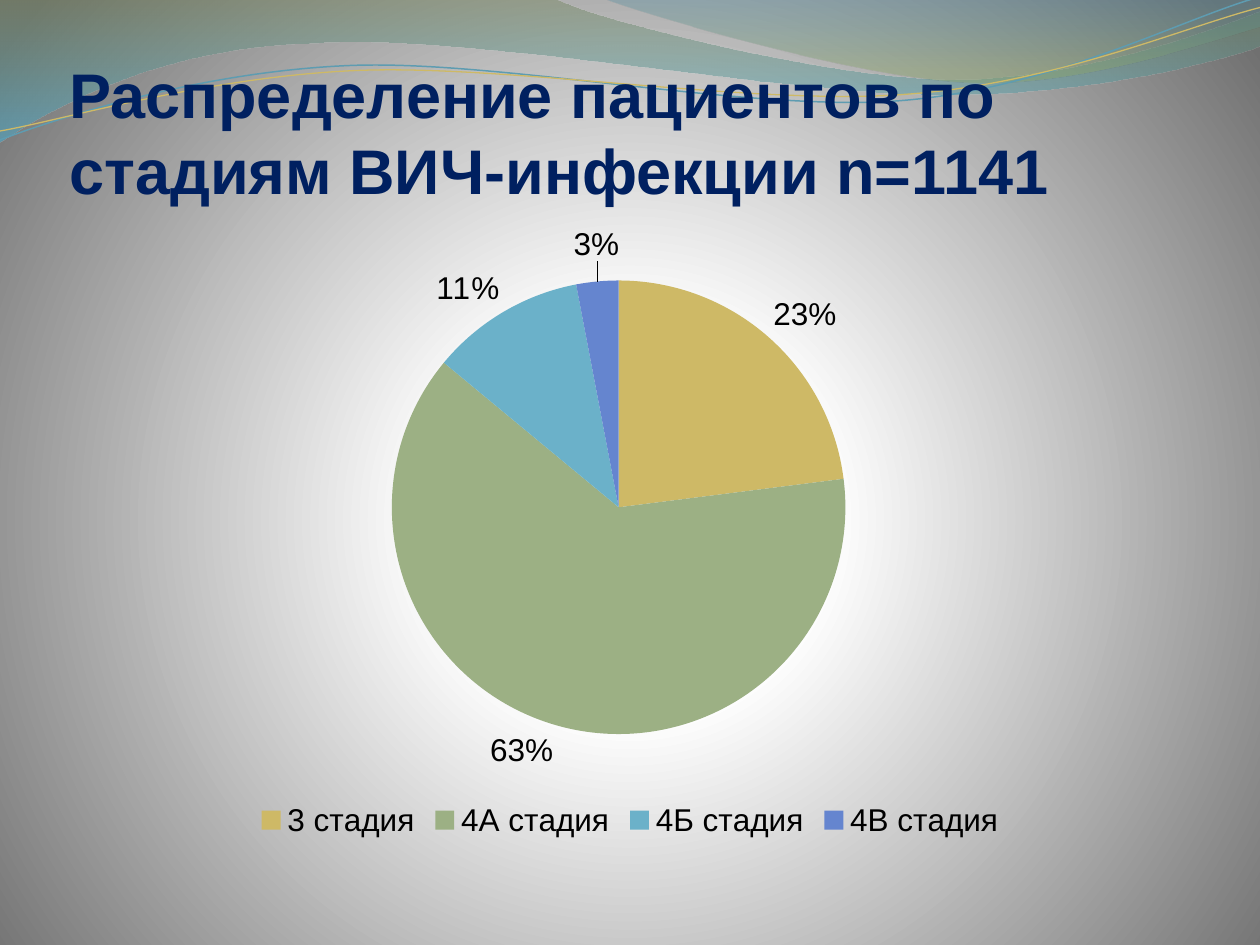
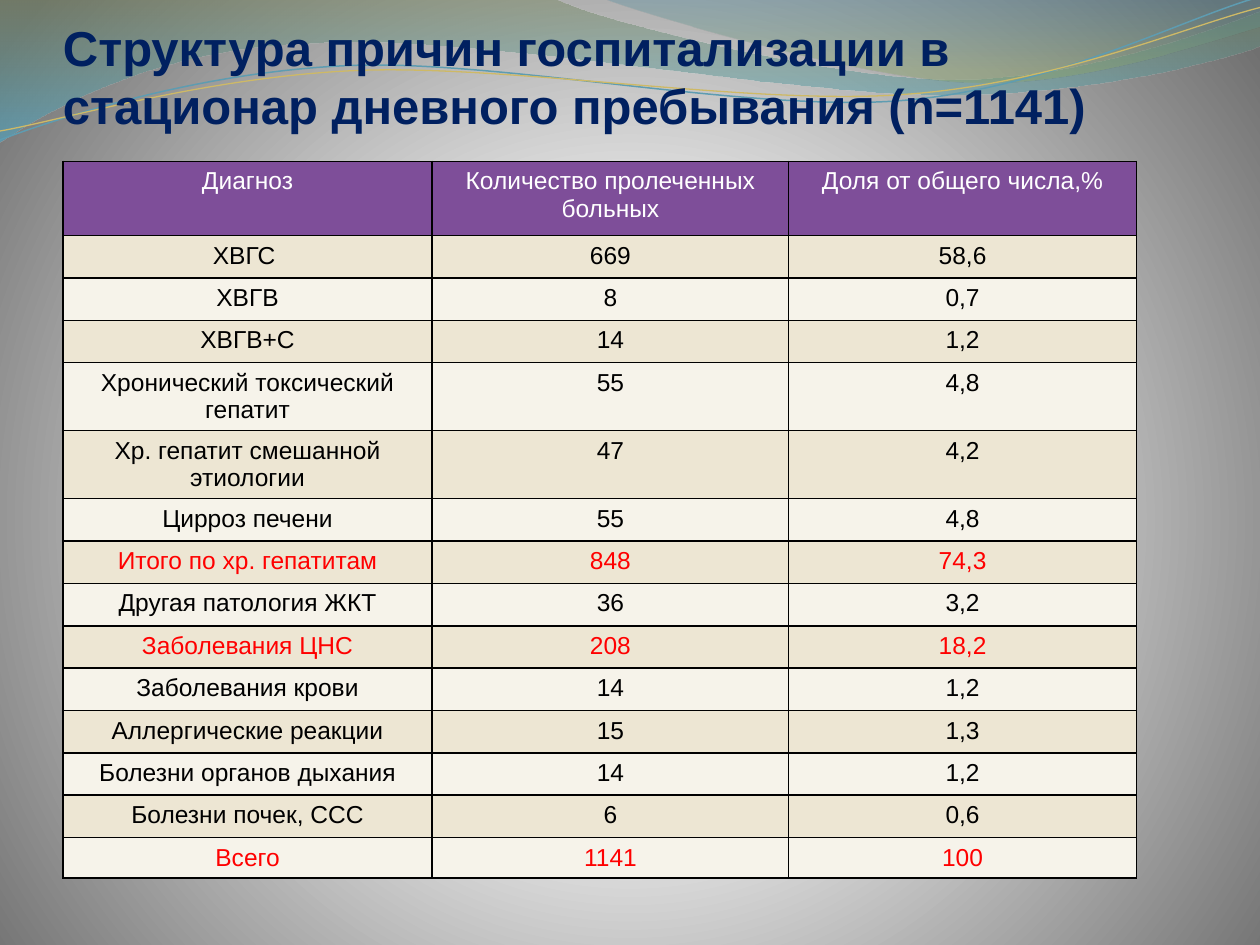
"""Build two slides on HIV patients: stages as a pie, hospitalisation causes as a table."""
from math import cos, radians, sin

from pptx import Presentation
from pptx.chart.data import CategoryChartData
from pptx.dml.color import RGBColor
from pptx.enum.chart import XL_CHART_TYPE, XL_LABEL_POSITION, XL_LEGEND_POSITION
from pptx.enum.text import MSO_ANCHOR, PP_ALIGN
from pptx.oxml import parse_xml
from pptx.oxml.ns import nsdecls, qn
from pptx.util import Inches, Pt

FONT = "Arial"
NAVY = RGBColor(0x00, 0x20, 0x60)
BLACK = RGBColor(0x00, 0x00, 0x00)
WHITE = RGBColor(0xFF, 0xFF, 0xFF)
GREY = RGBColor(0x70, 0x70, 0x70)
RED = RGBColor(0xFF, 0x00, 0x00)
PURPLE = RGBColor(0x7E, 0x4E, 0x99)
SAND = RGBColor(0xED, 0xE6, 0xD3)
CREAM = RGBColor(0xF6, 0xF3, 0xEA)
GOLD = RGBColor(0xCE, 0xB9, 0x66)
SAGE = RGBColor(0x9C, 0xB0, 0x84)
SKY = RGBColor(0x6B, 0xB1, 0xC9)
BLUE = RGBColor(0x65, 0x85, 0xCF)
OLIVE = RGBColor(0x74, 0x85, 0x5E)
CYAN = RGBColor(0x4A, 0xAC, 0xCE)
TEAL = RGBColor(0x45, 0x88, 0x9F)
MOSS = RGBColor(0x8A, 0xA3, 0x6D)
STEEL = RGBColor(0x5E, 0x9C, 0xB1)

WIDTH, HEIGHT = 10, 7.5

STAGES_TITLE = "Распределение пациентов по стадиям ВИЧ-инфекции n=1141"
STAGES = [
    ("3 стадия", 23, GOLD),
    ("4А стадия", 63, SAGE),
    ("4Б стадия", 11, SKY),
    ("4В стадия", 3, BLUE),
]

CAUSES_TITLE = "Структура причин госпитализации в стационар дневного пребывания (n=1141)"
CAUSES_HEADER = ("Диагноз", "Количество пролеченных больных", "Доля от общего числа,%")
CAUSES = [
    ("ХВГС ", "669", "58,6"),
    ("ХВГВ", "8", "0,7"),
    ("ХВГВ+С", "14", "1,2"),
    ("Хронический токсический гепатит", "55", "4,8"),
    ("Хр. гепатит смешанной этиологии", "47", "4,2"),
    ("Цирроз печени", "55", "4,8"),
    ("Итого по хр. гепатитам", "848", "74,3"),
    ("Другая патология ЖКТ", "36", "3,2"),
    ("Заболевания ЦНС", "208", "18,2"),
    ("Заболевания крови", "14", "1,2"),
    ("Аллергические реакции", "15", "1,3"),
    ("Болезни органов дыхания", "14", "1,2"),
    ("Болезни почек, ССС", "6", "0,6"),
    ("Всего", "1141", "100"),
]
HIGHLIGHTED = {"Итого по хр. гепатитам", "Заболевания ЦНС", "Всего"}
COLUMN_WIDTHS = (2.93, 2.83, 2.76)
HEADER_HEIGHT, ROW_HEIGHT, WRAPPED_HEIGHT, LAST_HEIGHT = 0.59, 3.7 / 11, 0.54, 0.32
WRAP_LENGTH = 25

BACKDROP = [(0, WHITE, 100), (25, WHITE, 100), (100, GREY, 100)]
BACKDROP_SHAPE = ('<a:path path="circle"><a:fillToRect l="10000" t="110000" '
                  'r="10000" b="100000"/></a:path>')
DOWNWARD = '<a:lin ang="5400000" scaled="0"/>'

WAVES = [
    ([(0, 0), (4.4, -0.01), (4.76, 0.17, 6.64, 0.63, 7.58, 0.63),
      (8.53, 0.63, 9.58, 0.26, 10, 0.09), (10.01, 0.36),
      (9.83, 0.44, 8.7, 0.76, 7.46, 0.75), (6.22, 0.75, 3.82, 0.28, 2.57, 0.34),
      (1.29, 0.36, 0.46, 0.83, -0.01, 1.13), (0, 0)],
     [(0, OLIVE, 45), (100, CYAN, 55)]),
    ([(4.79, -0.01), (5.09, 0.11, 6.82, 0.62, 7.69, 0.65),
      (8.56, 0.69, 9.61, 0.32, 10, 0.21), (10, 0), (4.79, -0.01)],
     [(0, TEAL, 30), (80, MOSS, 45)]),
]
STRANDS = [
    ([(0, 1.11), (0.48, 0.93, 1.58, 0.57, 2.77, 0.52),
      (3.95, 0.47, 5.93, 0.89, 7.13, 0.8), (8.33, 0.71, 9.38, 0.15, 9.98, -0.02)],
     (4.99, 0.58), STEEL, 0.85),
    ([(0, 1.04), (0.47, 0.96, 1.64, 0.61, 2.83, 0.56),
      (4.03, 0.51, 5.97, 0.84, 7.17, 0.75), (8.36, 0.67, 9.41, 0.21, 10, 0.06)],
     (5, 0.59), GOLD, 0.75),
]
STRAND_TILT = -2.7


def write(frame, text, size=14, color=BLACK, bold=False, align=PP_ALIGN.LEFT):
    paragraph = frame.paragraphs[0]
    paragraph.alignment = align
    run = paragraph.add_run()
    run.text = text
    style(run.font, size, color, bold)


def style(font, size, color=BLACK, bold=False):
    font.name, font.size, font.bold = FONT, Pt(size), bold
    font.color.rgb = color


def blend(fill, owner, stops, direction):
    """Fill the owner element with a gradient of (position, colour, opacity) stops."""
    fill.solid()
    fill.fore_color.rgb = WHITE
    marks = "".join(
        f'<a:gs pos="{position * 1000}"><a:srgbClr val="{color}">'
        f'<a:alpha val="{opacity * 1000}"/></a:srgbClr></a:gs>'
        for position, color, opacity in stops)
    plain = owner.find(".//" + qn("a:solidFill"))
    plain.getparent().replace(plain, parse_xml(
        f'<a:gradFill {nsdecls("a")} rotWithShape="1"><a:gsLst>{marks}</a:gsLst>'
        f'{direction}</a:gradFill>'))


def turn(segment, center, angle):
    """Rotate every point of a segment about the center."""
    (cx, cy), c, s = center, cos(radians(angle)), sin(radians(angle))
    turned = []
    for x, y in zip(segment[::2], segment[1::2]):
        turned += [cx + (x - cx) * c - (y - cy) * s, cy + (x - cx) * s + (y - cy) * c]
    return tuple(turned)


def draw(slide, outline, close):
    """Draw a freeform whose six-number segments are cubic curves."""
    start, *rest = [(Inches(x), Inches(y)) for segment in outline
                    for x, y in zip(segment[::2], segment[1::2])]
    builder = slide.shapes.build_freeform(*start)
    builder.add_line_segments(rest, close=close)
    figure = builder.convert_to_shape()
    figure.shadow.inherit = False
    steps = iter(list(figure._element.iter(qn("a:lnTo"))))
    for segment in outline[1:]:
        first, *others = [next(steps) for _ in segment[::2]]
        if others:
            curve = parse_xml(f'<a:cubicBezTo {nsdecls("a")}/>')
            first.getparent().replace(first, curve)
            curve.append(first[0])
            for other in others:
                curve.append(other[0])
                other.getparent().remove(other)
    return figure


def add_slide(deck, title, top, height, left, size):
    slide = deck.slides.add_slide(deck.slide_layouts[6])
    blend(slide.background.fill, slide._element, BACKDROP, BACKDROP_SHAPE)
    for outline, stops in WAVES:
        wave = draw(slide, outline, True)
        wave.line.fill.background()
        blend(wave.fill, wave._element.spPr, stops, DOWNWARD)
    for outline, center, color, width in STRANDS:
        level = [turn(segment, center, -STRAND_TILT) for segment in outline]
        strand = draw(slide, level, False)
        strand.rotation = STRAND_TILT
        strand.fill.background()
        strand.line.color.rgb = color
        strand.line.width = Pt(width)
    frame = slide.shapes.add_textbox(
        Inches(left), Inches(top), Inches(0.9 * WIDTH), Inches(height)).text_frame
    frame.word_wrap = True
    frame.vertical_anchor = MSO_ANCHOR.BOTTOM
    frame.margin_left = frame.margin_right = frame.margin_bottom = 0
    write(frame, title, size=size, color=NAVY, bold=True)
    return slide


def place(owner, before, x, y, extra=""):
    """Insert a manual chart layout given as shares of the chart."""
    owner.insert(before, parse_xml(
        f'<c:layout {nsdecls("c")}><c:manualLayout>{extra}'
        f'<c:x val="{x}"/><c:y val="{y}"/>'
        + ('<c:w val="0.4"/><c:h val="0.74"/>' if extra else "")
        + '</c:manualLayout></c:layout>'))


def add_stages(slide):
    shares = CategoryChartData()
    shares.categories = [stage for stage, _, _ in STAGES]
    shares.add_series("Series 1", [share for _, share, _ in STAGES])
    chart = slide.shapes.add_chart(
        XL_CHART_TYPE.PIE, Inches(0.5), Inches(1.75), Inches(0.9 * WIDTH),
        Inches(0.66 * HEIGHT), shares).chart
    chart.has_title = False
    style(chart.font, 18)
    chart.has_legend = True
    chart.legend.position = XL_LEGEND_POSITION.BOTTOM
    chart.legend.include_in_layout = False
    style(chart.legend.font, 18)
    pie = chart.plots[0]
    pie.vary_by_categories = True
    ring = pie.series[0]
    for index, (_, _, color) in enumerate(STAGES):
        sector = ring.points[index].format
        sector.fill.solid()
        sector.fill.fore_color.rgb = color
        sector.line.fill.background()
    labels = ring.data_labels
    labels.show_value, labels.show_percentage = False, True
    labels.number_format, labels.number_format_is_linked = "0%", False
    labels.position = XL_LABEL_POSITION.OUTSIDE_END
    style(labels.font, 18)

    smallest = ring.points[len(STAGES) - 1].data_label
    smallest.position = XL_LABEL_POSITION.OUTSIDE_END
    style(smallest.font, 18)
    lifted = ring._element.find(".//" + qn("c:dLbl"))
    lifted.find(qn("c:showVal")).set("val", "0")
    lifted.find(qn("c:showPercent")).set("val", "1")
    place(lifted, 1, 0.02, -0.02)

    area = chart._chartSpace.find(".//" + qn("c:plotArea"))
    for automatic in area.findall(qn("c:layout")):
        area.remove(automatic)
    place(area, 0, 0.29, 0.09, '<c:layoutTarget val="inner"/>'
          '<c:xMode val="edge"/><c:yMode val="edge"/>')


def add_borders(cell):
    properties = cell._tc.get_or_add_tcPr()
    for order, side in enumerate(("lnL", "lnR", "lnT", "lnB")):
        properties.insert(order, parse_xml(
            f'<a:{side} {nsdecls("a")} w="{Pt(1)}"><a:solidFill>'
            f'<a:srgbClr val="{BLACK}"/></a:solidFill></a:{side}>'))


def add_causes(slide):
    heights = [WRAPPED_HEIGHT if len(cause) > WRAP_LENGTH else ROW_HEIGHT
               for cause, _, _ in CAUSES]
    heights = [HEADER_HEIGHT, *heights[:-1], LAST_HEIGHT]
    grid = slide.shapes.add_table(
        len(heights), len(COLUMN_WIDTHS), Inches(0.5), Inches(1.28),
        Inches(sum(COLUMN_WIDTHS)), Inches(sum(heights))).table
    for column, width in zip(grid.columns, COLUMN_WIDTHS):
        column.width = Inches(width)
    for number, values in enumerate([CAUSES_HEADER, *CAUSES]):
        grid.rows[number].height = Inches(heights[number])
        band = SAND if number % 2 else CREAM
        ink = RED if values[0] in HIGHLIGHTED else BLACK
        if number == 0:
            band, ink = PURPLE, WHITE
        for cell, value in zip(grid.rows[number].cells, values):
            cell.fill.solid()
            cell.fill.fore_color.rgb = band
            cell.margin_bottom = Inches(0.01)
            add_borders(cell)
            write(cell.text_frame, value, color=ink, align=PP_ALIGN.CENTER)


def main():
    deck = Presentation()
    deck.slide_width, deck.slide_height = Inches(WIDTH), Inches(HEIGHT)
    add_stages(add_slide(deck, STAGES_TITLE, top=0.39, height=1.25, left=0.55, size=36))
    add_causes(add_slide(deck, CAUSES_TITLE, top=0.3, height=0.77, left=0.5, size=28))
    deck.save("out.pptx")


if __name__ == "__main__":
    main()
